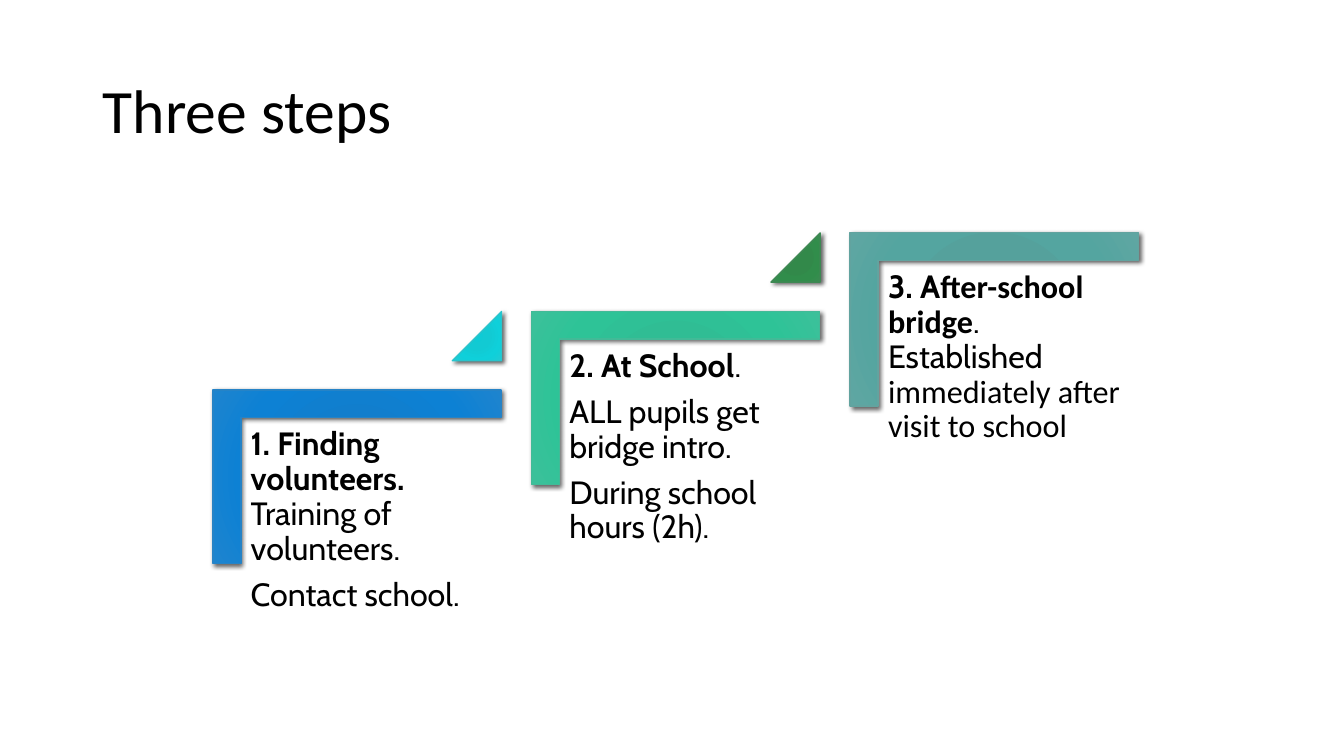
from pptx import Presentation
from pptx.dml.color import RGBColor
from pptx.enum.shapes import MSO_SHAPE as Preset
from pptx.enum.text import MSO_ANCHOR as Anchor, MSO_AUTO_SIZE as AutoSize, PP_ALIGN as Align
from pptx.oxml import parse_xml
from pptx.oxml.ns import nsdecls, qn
from pptx.util import Cm, Pt

# Content: each step has paragraphs of (text, bold, font) runs
TITLE = "Three steps"
STEPS = [
    [[("1. Finding volunteers.", True, "Cabin"),
      (" Training of volunteers.", False, "Cabin")],
     [("Contact school.", False, "Cabin")]],
    [[("2. At School", True, "Cabin"), (".", False, "Cabin")],
     [("ALL pupils get bridge intro.", False, "Cabin")],
     [("During school hours (2h).", False, "Cabin")]],
    [[("3. A", True, "Cabin"), ("fter-school bridge", True, "Calibri"),
      (". Established ", False, "Cabin"),
      ("immediately after visit to school", False, "Calibri")]],
]

# Colours: four gradient stops and a line for each shape
COLORS = {"text": "000000", "shadow": "000000"}
STOPS = (0, 34, 70, 100)
CORNERS = [
    {"stops": ("0D7ECF", "117ECD", "0D81D4", "1E84CE"), "line": "2683C6"},
    {"stops": ("2DBE94", "30BD94", "2EC397", "3CC09A"), "line": "42BA97"},
    {"stops": ("52A19C", "55A19C", "54A5A0", "5FA6A2"), "line": "62A39F"},
]
TRIANGLES = [
    {"stops": ("0ECBD5", "12CAD3", "0FD0DA", "20CBD4"), "line": "28C4CC"},
    {"stops": ("2F8949", "32894A", "318D4B", "3A8C51"), "line": "3E8853"},
]

# First step in centimetres (left, top, width, height), and the move to the next
CORNER_BOX = (6.81, 8.38, 4.37, 7.26)
TEXT_BOX = (6.07, 10.54, 6.55, 5.74)
TRIANGLE_BOX = (11.4, 7.85, 1.24, 1.24)
STEP_RIGHT, STEP_UP = 8.03, 1.98
TITLE_BOX = (2.34, 1.02, 29.21, 3.68)


def place(box, index):
    left, top, width, height = box
    return [Cm(value) for value in
            (left + index * STEP_RIGHT, top - index * STEP_UP, width, height)]


def set_values(target, values):
    for name, value in values.items():
        setattr(target, name, value)


def add_run(paragraph, text, size, font, bold=False):
    run = paragraph.add_run()
    run.text = text
    set_values(run.font, {"size": Pt(size), "name": font, "bold": bold})
    run.font.color.rgb = RGBColor.from_string(COLORS["text"])


def add_block(slide, preset, box, index, colors, adjustments, rotation=0):
    shape = slide.shapes.add_shape(preset, *place(box, index))
    shape.rotation = rotation
    for number, value in enumerate(adjustments):
        shape.adjustments[number] = value
    shape.line.color.rgb = RGBColor.from_string(colors["line"])
    shape.line.width = Pt(1)
    shape.shadow.inherit = False

    # Radial gradient
    stops = "".join(
        f'<a:gs pos="{position * 1000}"><a:srgbClr val="{color}"/></a:gs>'
        for position, color in zip(STOPS, colors["stops"]))
    properties = shape._element.spPr
    properties.find(qn("a:prstGeom")).addnext(parse_xml(
        f'<a:gradFill {nsdecls("a")} rotWithShape="1"><a:gsLst>{stops}</a:gsLst>'
        '<a:path path="circle"><a:fillToRect l="100000" t="100000" '
        'r="100000" b="100000"/></a:path></a:gradFill>'))

    # Soft shadow to the lower right
    properties.find(qn("a:effectLst")).append(parse_xml(
        f'<a:outerShdw {nsdecls("a")} blurRad="{Pt(3)}" dist="{Pt(2)}" '
        f'dir="2700000" rotWithShape="0"><a:srgbClr val="{COLORS["shadow"]}">'
        '<a:alpha val="60000"/></a:srgbClr></a:outerShdw>'))


def add_step_text(slide, index, paragraphs):
    frame = slide.shapes.add_textbox(*place(TEXT_BOX, index)).text_frame
    inset = Cm(0.25)
    set_values(frame, {"word_wrap": True, "auto_size": AutoSize.NONE,
                       "vertical_anchor": Anchor.TOP,
                       "margin_left": inset, "margin_right": inset,
                       "margin_top": inset, "margin_bottom": inset})
    for number, runs in enumerate(paragraphs):
        paragraph = frame.add_paragraph() if number else frame.paragraphs[0]
        set_values(paragraph, {"line_spacing": 0.9, "space_after": Pt(8),
                               "alignment": Align.LEFT})
        for text, bold, font in runs:
            add_run(paragraph, text, 23, font, bold)


def main():
    presentation = Presentation()
    set_values(presentation, {"slide_width": Cm(33.87), "slide_height": Cm(19.05)})
    slide = presentation.slides.add_slide(presentation.slide_layouts[5])

    # Title
    title = slide.shapes.title
    set_values(title, dict(zip(("left", "top", "width", "height"), place(TITLE_BOX, 0))))
    set_values(title.text_frame, {"vertical_anchor": Anchor.MIDDLE, "word_wrap": True})
    heading = title.text_frame.paragraphs[0]
    set_values(heading, {"alignment": Align.LEFT, "line_spacing": 0.9})
    add_run(heading, TITLE, 44, "Calibri")

    # Staircase
    for index, paragraphs in enumerate(STEPS):
        add_block(slide, Preset.CORNER, CORNER_BOX, index, CORNERS[index],
                  (0.161, 0.161), rotation=90)
        add_step_text(slide, index, paragraphs)
        if index < len(TRIANGLES):
            add_block(slide, Preset.ISOSCELES_TRIANGLE, TRIANGLE_BOX, index,
                      TRIANGLES[index], (1,))

    presentation.save("out.pptx")


if __name__ == "__main__":
    main()
